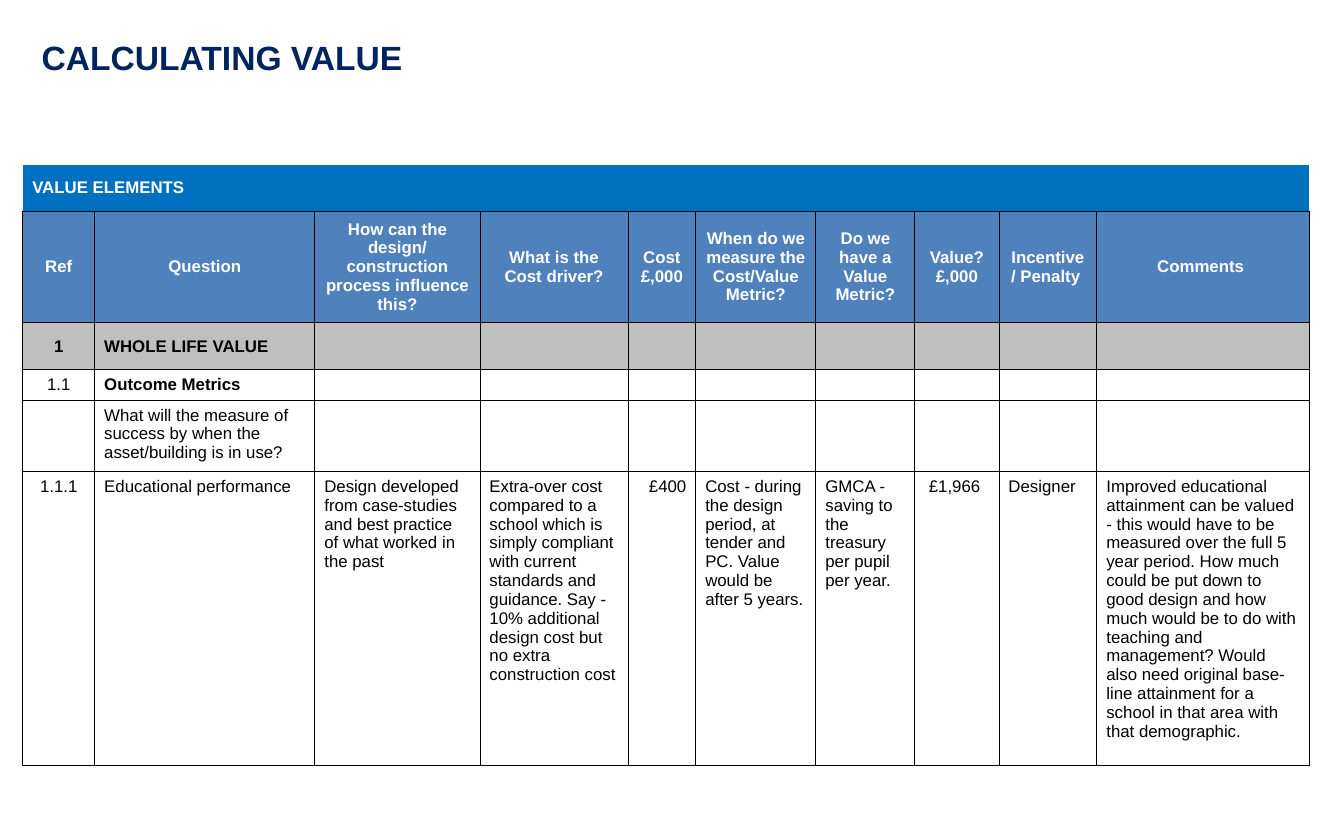
import pptx
import pptx.dml.color
import pptx.enum.text
import pptx.oxml.ns
import pptx.util
from lxml import etree

Cm, Pt = pptx.util.Cm, pptx.util.Pt
ALIGN = pptx.enum.text.PP_ALIGN
ANCHOR = pptx.enum.text.MSO_ANCHOR
qn = pptx.oxml.ns.qn

# Content
TITLE = "CALCULATING VALUE"
BANNER = ["VALUE ELEMENTS"]
HEADINGS = [
    "Ref", "Question",
    "How can the design/ construction process influence this?",
    "What is the Cost driver?", "Cost\n£,000",
    "When do we measure the Cost/Value Metric?",
    "Do we have a Value Metric?", "Value?\n£,000",
    "Incentive / Penalty ", "Comments ",
]
SECTION = ["1", "WHOLE LIFE VALUE"]
SUBSECTION = ["1.1", "Outcome Metrics"]
PROMPT = ["", "What will the measure of success by when the asset/building is in use?"]
EXAMPLE = [
    "1.1.1", "Educational performance",
    "Design developed from case-studies and best practice of what worked in the past",
    "Extra-over cost compared to a school which is simply compliant with current "
    "standards and guidance. Say - 10% additional design cost but no extra "
    "construction cost",
    "£400",
    "Cost - during the design period, at tender and PC. Value would be after 5 years.",
    "GMCA - saving to the treasury per pupil per year.",
    "£1,966 ", "Designer",
    "Improved educational attainment can be valued - this would have to be measured "
    "over the full 5 year period. How much could be put down to good design and how "
    "much would be to do with teaching and management? Would also need original "
    "base-line attainment for a school in that area with that demographic.",
]

# Formats
COLORS = {"navy": "00245D", "banner": "0070C0", "heading": "4F81BD",
          "section": "BFBFBF", "white": "FFFFFF", "black": "000000"}
L, C, R = ALIGN.LEFT, ALIGN.CENTER, ALIGN.RIGHT
BODY_ALIGN = [C, L, L, L, R, L, L, C, L, L]
ALL_LEFT, ALL_CENTER = [L] * 10, [C] * 10
TOP, MIDDLE = ANCHOR.TOP, ANCHOR.MIDDLE
ALL_SIDES = ("L", "R", "T", "B")
COLUMN_WIDTHS = [1.36, 4.16, 3.12, 2.8, 1.28, 2.27, 1.87, 1.59, 1.85, 4.01]
CELL_FORMAT = {"margin_left": Cm(0.18), "margin_right": Cm(0.18),
               "margin_top": Cm(0.1), "margin_bottom": Cm(0.1)}
# texts, height, fill, text colour, bold columns, alignment, anchor, ruled sides
ROWS = [
    (BANNER, 0.88, "banner", "white", range(10), ALL_LEFT, MIDDLE, ("B",)),
    (HEADINGS, 2.09, "heading", "white", range(10), ALL_CENTER, MIDDLE, ALL_SIDES),
    (SECTION, 0.89, "section", "black", range(10), BODY_ALIGN, MIDDLE, ALL_SIDES),
    (SUBSECTION, 0.58, None, "black", [1], BODY_ALIGN, TOP, ALL_SIDES),
    (PROMPT, 1.34, None, "black", [], BODY_ALIGN, TOP, ALL_SIDES),
    (EXAMPLE, 5.52, None, "black", [], BODY_ALIGN, TOP, ALL_SIDES),
]


def set_all(target, values):
    for name, value in values.items():
        setattr(target, name, value)


def rgb(name):
    return pptx.dml.color.RGBColor.from_string(COLORS[name])


def format_font(font, size, color, bold):
    set_all(font, {"name": "Arial", "size": Pt(size), "bold": bold})
    font.color.rgb = rgb(color)


def set_borders(cell, ruled_sides):
    properties = cell._tc.get_or_add_tcPr()
    for side in ALL_SIDES:
        line = etree.SubElement(properties, qn(f"a:ln{side}"), w=str(Pt(0.5)))
        if side in ruled_sides:
            fill = etree.SubElement(line, qn("a:solidFill"))
            etree.SubElement(fill, qn("a:srgbClr"), val=COLORS["black"])
        else:
            etree.SubElement(line, qn("a:noFill"))


def fill_cell(cell, text, fill, color, bold, alignment, anchor, ruled_sides):
    set_borders(cell, ruled_sides)
    if fill:
        cell.fill.solid()
        cell.fill.fore_color.rgb = rgb(fill)
    else:
        cell.fill.background()
    set_all(cell, {**CELL_FORMAT, "vertical_anchor": anchor})
    cell.text = text
    for paragraph in cell.text_frame.paragraphs:
        paragraph.alignment = alignment
        for run in paragraph.runs:
            format_font(run.font, 9, color, bold)
        if not paragraph.runs:  # keeps empty cells from stretching the row
            etree.SubElement(paragraph._p, qn("a:endParaRPr"), sz="900")


presentation = pptx.Presentation()
set_all(presentation, {"slide_width": Cm(25.4), "slide_height": Cm(15.88)})
slide = presentation.slides.add_slide(presentation.slide_layouts[6])

# Title
title = slide.shapes.add_textbox(Cm(0.79), Cm(0.69), Cm(17.53), Cm(1.88))
set_all(title.text_frame, {"margin_left": 0, "margin_right": 0, "margin_top": 0,
                           "margin_bottom": 0, "word_wrap": True,
                           "vertical_anchor": TOP})
title.text_frame.text = TITLE
format_font(title.text_frame.paragraphs[0].runs[0].font, 18, "navy", True)

# Value table
frame = slide.shapes.add_table(
    len(ROWS), len(COLUMN_WIDTHS), Cm(0.43), Cm(3.11),
    Cm(sum(COLUMN_WIDTHS)), Cm(sum(row[1] for row in ROWS)))
table = frame.table
set_all(table, {"first_row": False, "horz_banding": False})
for column, width in zip(table.columns, COLUMN_WIDTHS):
    column.width = Cm(width)

for row_index, row in enumerate(ROWS):
    texts, height, fill, color, bold_columns, alignments, anchor, sides = row
    table.rows[row_index].height = Cm(height)
    for column_index, alignment in enumerate(alignments):
        text = texts[column_index] if column_index < len(texts) else ""
        fill_cell(table.cell(row_index, column_index), text, fill, color,
                  column_index in bold_columns, alignment, anchor, sides)
table.cell(0, 0).merge(table.cell(0, 1))

presentation.save("out.pptx")
